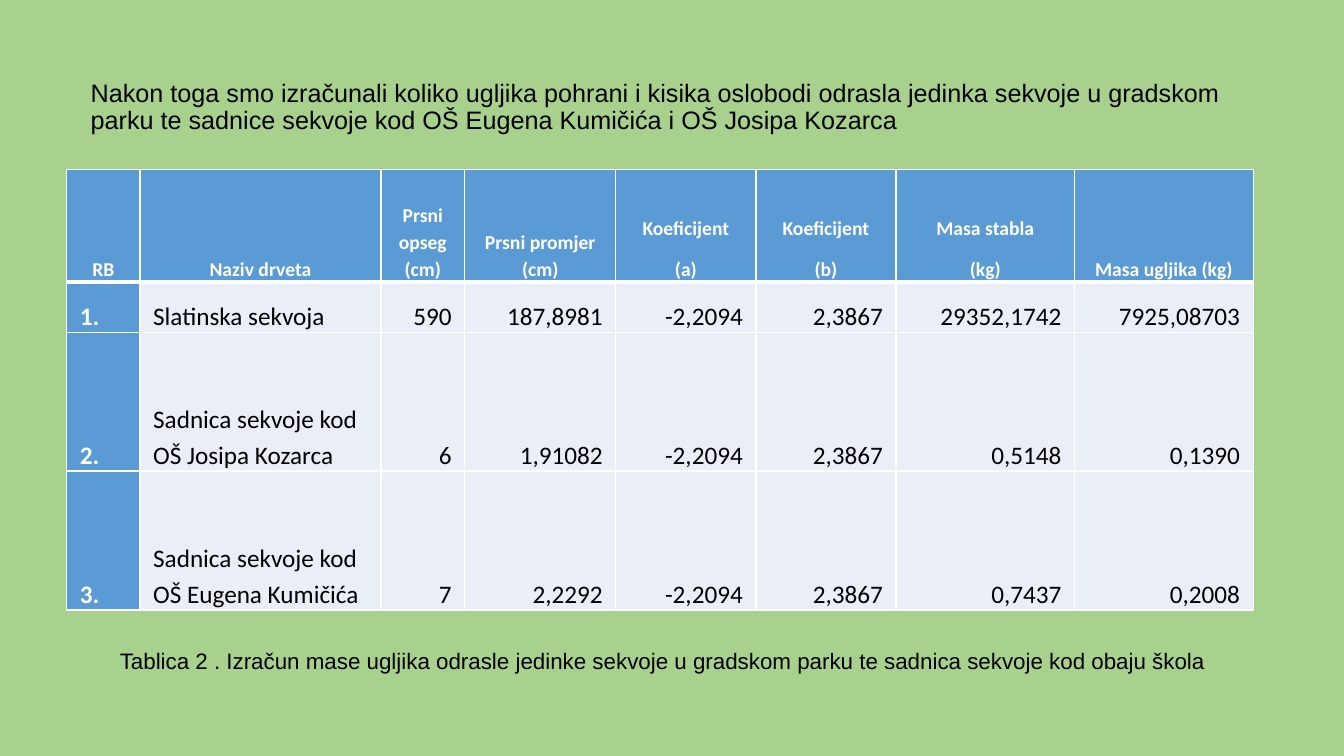
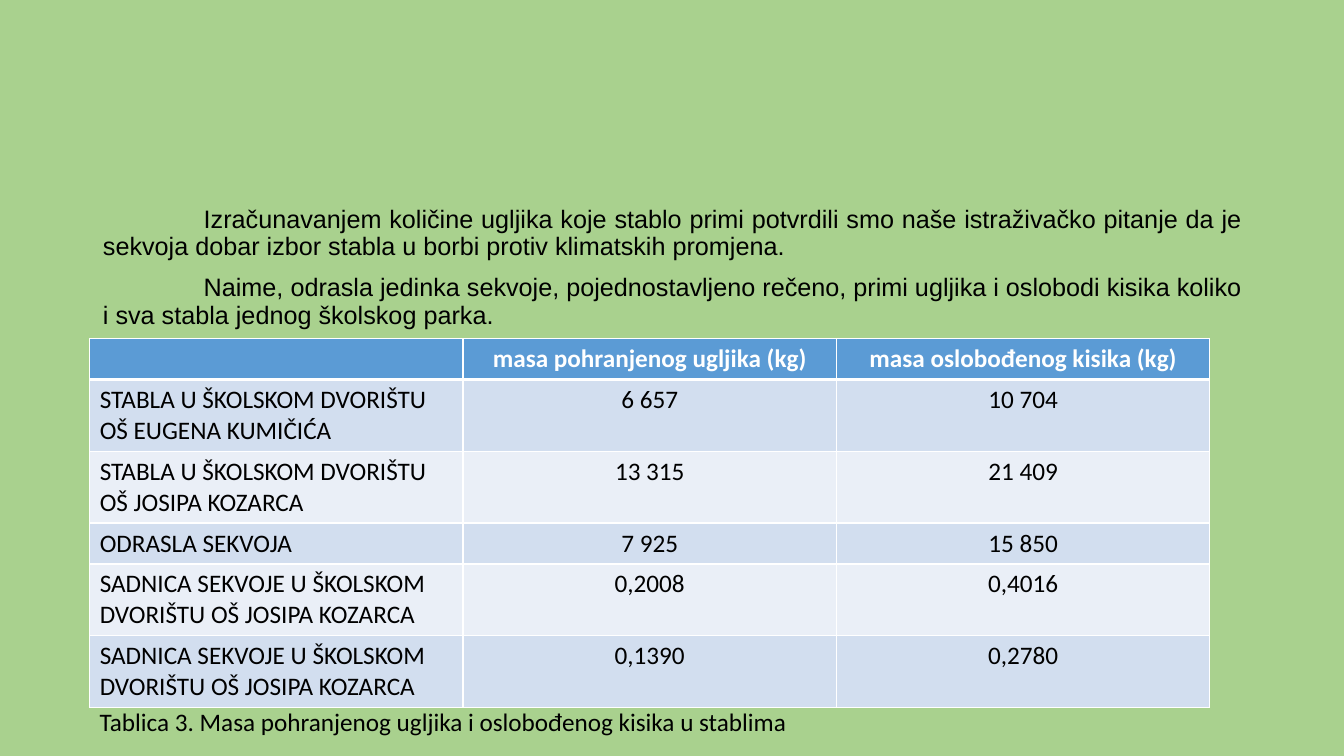
from lxml import etree
from pptx import Presentation
from pptx.dml.color import RGBColor
from pptx.enum import text as t
from pptx.oxml import ns
from pptx.util import Cm, Pt

GREEN = RGBColor(0xA9, 0xD1, 0x8E)
BLUE = RGBColor(0x5B, 0x9B, 0xD5)
PALE = RGBColor(0xEA, 0xEF, 0xF7)
MIST = RGBColor(0xD2, 0xDE, 0xEF)
WHITE = RGBColor(0xFF, 0xFF, 0xFF)
BLACK = RGBColor(0, 0, 0)
LEFT, MID, RIGHT, JUST = (t.PP_ALIGN.LEFT, t.PP_ALIGN.CENTER,
                          t.PP_ALIGN.RIGHT, t.PP_ALIGN.JUSTIFY)
TOP, CENTRE, BOTTOM = (t.MSO_ANCHOR.TOP, t.MSO_ANCHOR.MIDDLE,
                       t.MSO_ANCHOR.BOTTOM)

TREES = [
    ["RB", "Naziv drveta", "Prsni opseg (cm)", "Prsni promjer (cm)",
     "Koeficijent\n(a)", "Koeficijent\n(b)", "Masa stabla\n(kg)",
     "Masa ugljika (kg)"],
    ["1.", "Slatinska sekvoja", "590", "187,8981", "-2,2094", "2,3867",
     "29352,1742", "7925,08703"],
    ["2.", "Sadnica sekvoje kod OŠ Josipa Kozarca", "6", "1,91082",
     "-2,2094", "2,3867", "0,5148", "0,1390"],
    ["3.", "Sadnica sekvoje kod OŠ Eugena Kumičića", "7", "2,2292",
     "-2,2094", "2,3867", "0,7437", "0,2008"],
]
GASES = [
    ["", "masa pohranjenog ugljika (kg)", "masa oslobođenog kisika (kg)"],
    ["STABLA U ŠKOLSKOM DVORIŠTU OŠ EUGENA KUMIČIĆA", "6 657", "10 704"],
    ["STABLA U ŠKOLSKOM DVORIŠTU OŠ JOSIPA KOZARCA", "13 315", "21 409"],
    ["ODRASLA SEKVOJA", "7 925", "15 850"],
    ["SADNICA SEKVOJE U ŠKOLSKOM DVORIŠTU OŠ JOSIPA KOZARCA",
     "0,2008", "0,4016"],
    ["SADNICA SEKVOJE U ŠKOLSKOM DVORIŠTU OŠ JOSIPA KOZARCA",
     "0,1390", "0,2780"],
]


def style(para, face="Arial", size=18, color=BLACK, bold=False,
          align=LEFT, line=1.0):
    """Format one paragraph."""
    para.alignment, para.line_spacing = align, line
    font = para.font
    font.name, font.size, font.bold = face, Pt(size), bold
    font.color.rgb = color


def place(shape, left, top, width, height):
    """Move and size a shape, in centimetres."""
    shape.left, shape.top = Cm(left), Cm(top)
    shape.width, shape.height = Cm(width), Cm(height)


def write(shape, words, anchor=TOP, **look):
    """Fill a shape with wrapped, formatted text."""
    frame = shape.text_frame
    frame.text = words
    frame.word_wrap = True
    frame.auto_size = t.MSO_AUTO_SIZE.NONE
    frame.vertical_anchor = anchor
    for para in frame.paragraphs:
        style(para, **look)


def caption(slide, box, words, **look):
    """Add a text box with a table caption."""
    write(slide.shapes.add_textbox(*map(Cm, box)), words, **look)


def indent(para):
    """Drop the bullet and indent the first line."""
    props = para._p.get_or_add_pPr()
    props.set("marL", "0")
    props.set("indent", str(Cm(2.54)))
    etree.SubElement(props, ns.qn("a:buNone"))


def border(cell, row):
    """Draw white cell borders, thick below the header row."""
    props = cell._tc.get_or_add_tcPr()
    thick = {"lnB": row == 0, "lnT": row == 1}
    for spot, side in enumerate(("lnL", "lnR", "lnT", "lnB")):
        line = etree.Element(ns.qn(f"a:{side}"))
        line.set("w", str(Pt(3 if thick.get(side) else 1)))
        fill = etree.SubElement(line, ns.qn("a:solidFill"))
        etree.SubElement(fill, ns.qn("a:srgbClr")).set("val", str(WHITE))
        props.insert(spot, line)


def grid(slide, left, top, cols, rows, data, paint):
    """Add a table and let paint format each cell."""
    frame = slide.shapes.add_table(len(rows), len(cols), Cm(left), Cm(top),
                                   Cm(sum(cols)), Cm(sum(rows)))
    table = frame.table
    table.horz_banding = False
    for col, width in zip(table.columns, cols):
        col.width = Cm(width)
    for row, height in zip(table.rows, rows):
        row.height = Cm(height)
    for r, line in enumerate(data):
        for c, words in enumerate(line):
            cell = table.cell(r, c)
            cell.text = words
            cell.fill.solid()
            paint(cell, r, c)
            border(cell, r)


def tree(cell, row, col):
    """Format a cell of the tree table."""
    head = row == 0
    key = head or col == 0
    cell.fill.fore_color.rgb = BLUE if key else PALE
    cell.vertical_anchor = BOTTOM
    cell.margin_left = cell.margin_right = Cm(0.33)
    cell.margin_top = cell.margin_bottom = 0
    align = MID if head else LEFT if col < 2 else RIGHT
    for para in cell.text_frame.paragraphs:
        style(para, "Calibri", 14 if head else 18,
              WHITE if key else BLACK, key, align, 1.15)
        para.space_after = Pt(10)


def gas(cell, row, col):
    """Format a cell of the gas table."""
    head = row == 0
    cell.fill.fore_color.rgb = BLUE if head else MIST if row % 2 else PALE
    style(cell.text_frame.paragraphs[0], "Calibri", 18,
          WHITE if head else BLACK, head, MID if col else LEFT)


def count(deck):
    """Build the slide with the carbon calculation."""
    slide = deck.slides.add_slide(deck.slide_layouts[5])
    title = slide.shapes.title
    place(title, 2.03, 1.95, 29.21, 1.55)
    write(title, "Nakon toga smo izračunali koliko ugljika pohrani i kisika "
          "oslobodi odrasla jedinka sekvoje u gradskom parku te sadnice "
          "sekvoje kod OŠ Eugena Kumičića i OŠ Josipa Kozarca",
          CENTRE, line=0.9)
    grid(slide, 1.68, 4.27, [1.85, 6.07, 2.11, 3.81, 3.53, 3.53, 4.5, 4.5],
         [2.84, 1.26, 3.5, 3.5], TREES, tree)
    caption(slide, (2.77, 16.08, 30.18, 1),
            "Tablica 2 . Izračun mase ugljika odrasle jedinke sekvoje u "
            "gradskom parku te sadnica sekvoje kod obaju škola",
            size=16, line=1.15)


def result(deck):
    """Build the slide with the conclusion and masses."""
    slide = deck.slides.add_slide(deck.slide_layouts[1])
    title = slide.shapes.title._element
    title.getparent().remove(title)
    body = slide.placeholders[1]
    place(body, 2.34, 5.08, 29.21, 3.4)
    body.text_frame.text = (
        "Izračunavanjem količine ugljika koje stablo primi potvrdili smo "
        "naše istraživačko pitanje da je sekvoja dobar izbor stabla u borbi "
        "protiv klimatskih promjena.\n"
        "Naime, odrasla jedinka sekvoje, pojednostavljeno rečeno, primi "
        "ugljika i oslobodi kisika koliko i sva stabla jednog školskog "
        "parka.")
    body.text_frame.auto_size = t.MSO_AUTO_SIZE.NONE
    for spot, para in enumerate(body.text_frame.paragraphs):
        indent(para)
        style(para, align=JUST, line=0.9)
        para.space_before = Pt(10 if spot else 0)
    grid(slide, 2.26, 8.53, [9.41] * 3,
         [1.03, 1.81, 1.81, 1.03, 1.81, 1.81], GASES, gas)
    caption(slide, (2.26, 17.68, 17.91, 1.02),
            "Tablica 3. Masa pohranjenog ugljika i oslobođenog kisika u "
            "stablima", face="Calibri")


def main():
    """Build and save the deck."""
    deck = Presentation()
    deck.slide_width, deck.slide_height = Cm(33.87), Cm(19.05)
    back = deck.slide_master.background.fill
    back.solid()
    back.fore_color.rgb = GREEN
    count(deck)
    result(deck)
    deck.save("out.pptx")


if __name__ == "__main__":
    main()
